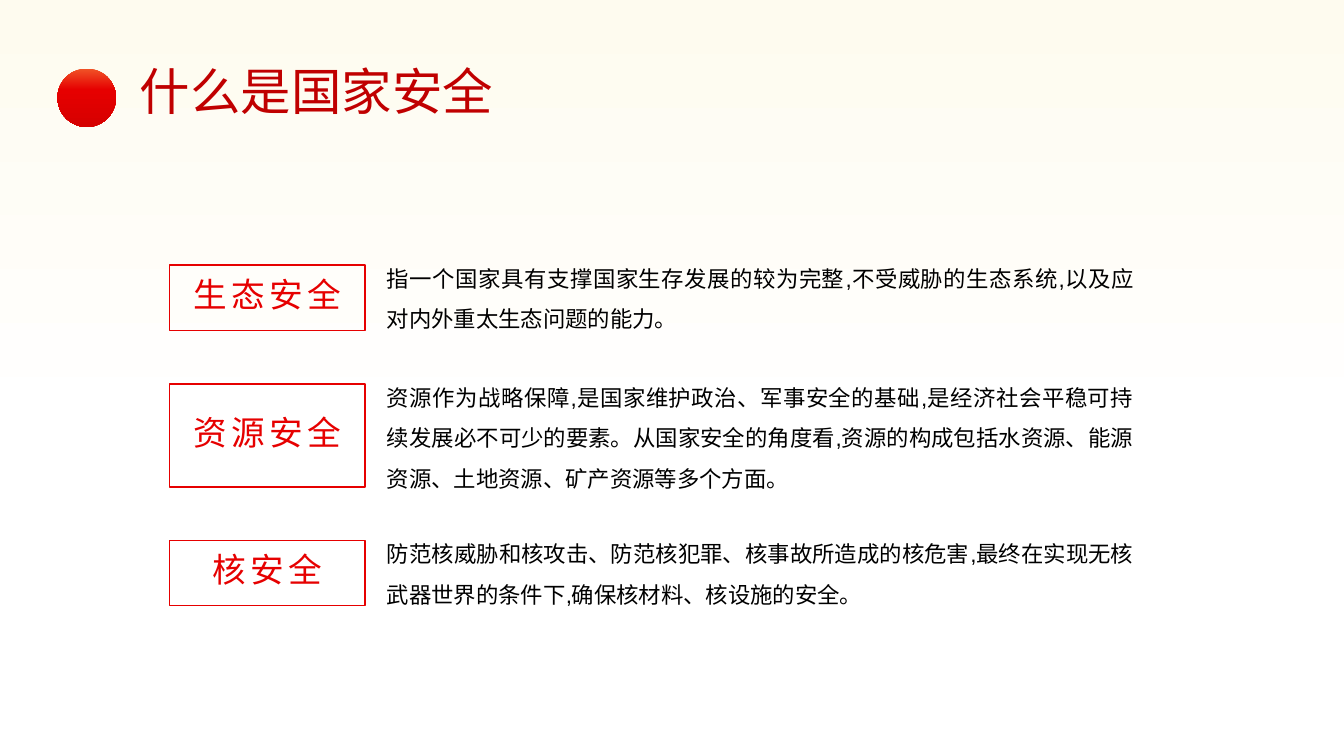
import copy
from dataclasses import dataclass

import pptx
import pptx.dml.color
import pptx.enum.lang
import pptx.enum.shapes
import pptx.enum.text
import pptx.oxml
import pptx.oxml.ns
import pptx.util
from pptx.util import Inches

ALIGN = pptx.enum.text.PP_ALIGN
SHAPES = pptx.enum.shapes.MSO_SHAPE


@dataclass(frozen=True)
class Theme:
    red: str = "E60000"
    title_red: str = "C00000"
    ink: str = "000000"
    backdrop: tuple = ((0, "FEFBEF"), (0.57, "FFFFFF"))
    bullet: tuple = ((0, "F05327"), (0.36, "E60000"), (1, "D60000"))
    cjk_font: str = "Noto Sans CJK SC"
    body_font: str = "Arial"
    title_size: int = 36
    label_size: int = 24
    body_size: int = 16


THEME = Theme()

# Label, description, top of the description, its height, height of the label box
TOPICS = [
    ("生态安全",
     "指一个国家具有支撑国家生存发展的较为完整,不受威胁的生态系统,以及应对内外重太生态问题的能力。",
     2.45, 0.91, 0.65),
    ("资源安全",
     "资源作为战略保障,是国家维护政治、军事安全的基础,是经济社会平稳可持续发展必不可少的要素。"
     "从国家安全的角度看,资源的构成包括水资源、能源资源、土地资源、矿产资源等多个方面。",
     3.63, 1.31, 1.02),
    ("核安全",
     "防范核威胁和核攻击、防范核犯罪、核事故所造成的核危害,最终在实现无核武器世界的条件下,"
     "确保核材料、核设施的安全。",
     5.18, 0.91, 0.65),
]


def rgb(colour):
    return pptx.dml.color.RGBColor.from_string(colour)


def write_text(frame, text, *, size, colour, font=THEME.cjk_font,
               align=ALIGN.JUSTIFY, line_spacing=None, tracking=None):
    """Fill the frame with one formatted paragraph; tracking is in points."""
    frame.word_wrap = True
    paragraph = frame.paragraphs[0]
    paragraph.alignment = align
    paragraph.line_spacing = line_spacing
    run = paragraph.add_run()
    run.text = text
    run.font.size = pptx.util.Pt(size)
    run.font.color.rgb = rgb(colour)
    run.font.name = font
    run.font.language_id = pptx.enum.lang.MSO_LANGUAGE_ID.SIMPLIFIED_CHINESE
    properties = run.font._element
    east_asian = pptx.oxml.parse_xml(
        f'<a:ea {pptx.oxml.ns.nsdecls("a")} typeface="{THEME.cjk_font}"/>')
    properties.find(pptx.oxml.ns.qn("a:latin")).addnext(east_asian)
    if tracking:
        properties.set("spc", str(tracking * 100))


def add_text(slide, text, left, top, width, height, **text_format):
    frame = slide.shapes.add_textbox(
        Inches(left), Inches(top), Inches(width), Inches(height)).text_frame
    write_text(frame, text, **text_format)
    frame.auto_size = pptx.enum.text.MSO_AUTO_SIZE.SHAPE_TO_FIT_TEXT


def add_plain_shape(slide, kind, left, top, width, height):
    shape = slide.shapes.add_shape(
        kind, Inches(left), Inches(top), Inches(width), Inches(height))
    shape.shadow.inherit = False
    return shape


def add_gradient_shape(slide, kind, left, top, width, height, stops):
    """Add a borderless shape whose colour stops run from top to bottom."""
    shape = add_plain_shape(slide, kind, left, top, width, height)
    shape.line.fill.background()
    shape.fill.gradient()
    shape.fill.gradient_angle = 270
    stop_list = shape._element.spPr.find(".//" + pptx.oxml.ns.qn("a:gsLst"))
    for _ in range(len(stops) - len(stop_list)):
        stop_list.append(copy.deepcopy(stop_list[-1]))
    for stop, (position, colour) in zip(shape.fill.gradient_stops, stops):
        stop.position = position
        stop.color.rgb = rgb(colour)


def add_label(slide, text, left, top, width, height):
    box = add_plain_shape(slide, SHAPES.RECTANGLE, left, top, width, height)
    box.fill.background()
    box.line.color.rgb = rgb(THEME.red)
    box.line.width = pptx.util.Pt(1)
    frame = box.text_frame
    frame.vertical_anchor = pptx.enum.text.MSO_ANCHOR.MIDDLE
    frame.margin_bottom = Inches(0.12)
    write_text(frame, text, size=THEME.label_size, colour=THEME.red,
               align=ALIGN.CENTER, tracking=3)


def add_topic(slide, label, description, top, height, label_height):
    add_label(slide, label, 1.68, top + 0.18, 1.94, label_height)
    add_text(slide, description, 3.74, top, 7.6, height, size=THEME.body_size,
             colour=THEME.ink, font=THEME.body_font, line_spacing=1.5)


def main():
    deck = pptx.Presentation()
    deck.slide_width, deck.slide_height = Inches(13.33), Inches(7.5)
    slide = deck.slides.add_slide(deck.slide_layouts[6])
    add_gradient_shape(slide, SHAPES.RECTANGLE, 0, 0, 13.33, 7.5, THEME.backdrop)
    add_text(slide, "什么是国家安全", 1.29, 0.55, 4.04, 0.71,
             size=THEME.title_size, colour=THEME.title_red)
    add_gradient_shape(slide, SHAPES.OVAL, 0.57, 0.68, 0.58, 0.58, THEME.bullet)
    for topic in TOPICS:
        add_topic(slide, *topic)
    deck.save("out.pptx")


if __name__ == "__main__":
    main()
